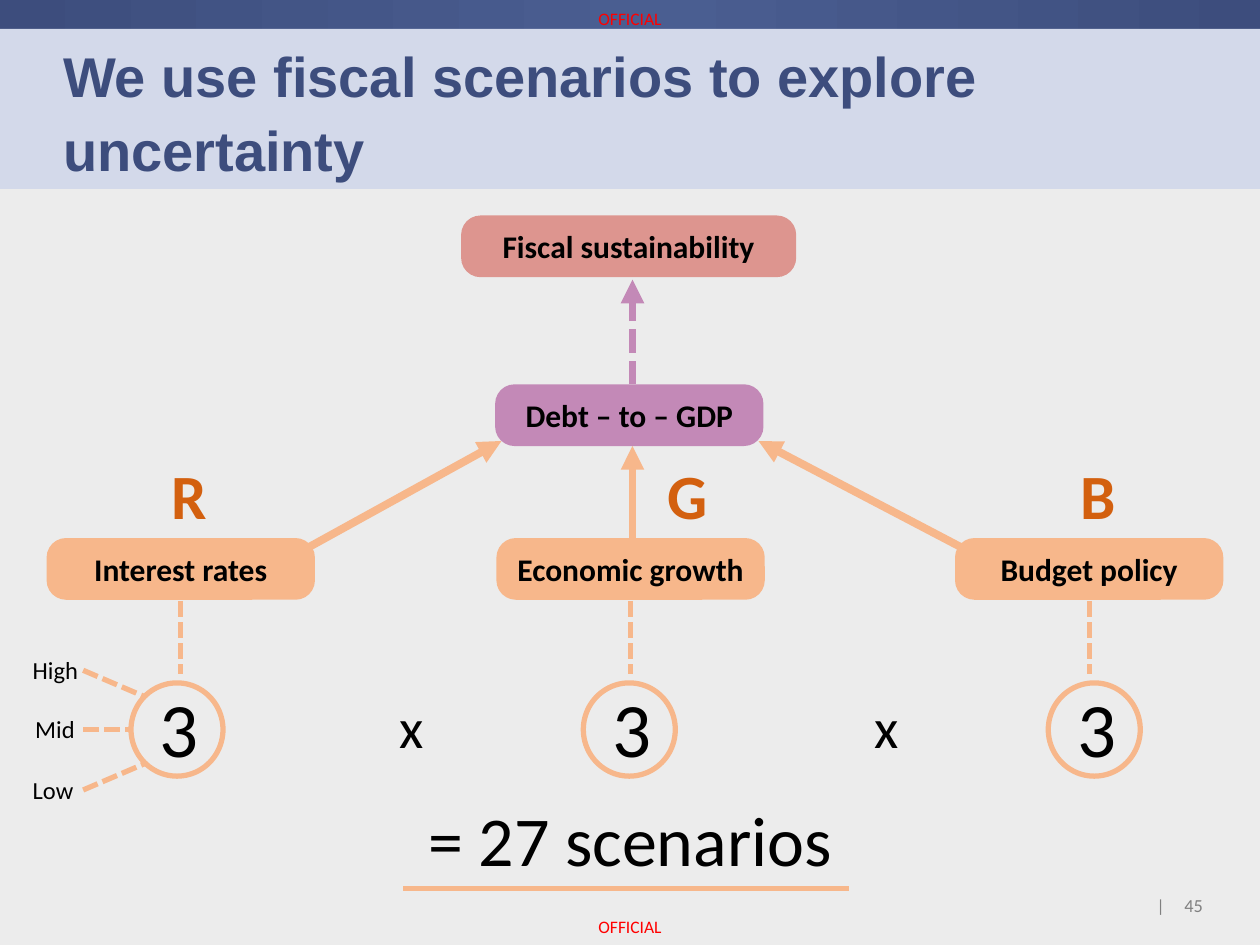
from copy import deepcopy

from pptx import Presentation
from pptx.dml.color import RGBColor
from pptx.enum.dml import MSO_LINE as Dash
from pptx.enum.shapes import MSO_CONNECTOR as Link, MSO_SHAPE as Preset
from pptx.enum.text import MSO_ANCHOR as Anchor, MSO_AUTO_SIZE as Fit, PP_ALIGN as Align
from pptx.oxml.ns import qn
from pptx.oxml.xmlchemy import OxmlElement
from pptx.util import Inches, Pt

PAPER = RGBColor(0xEC, 0xEC, 0xEC)
PALE_BLUE = RGBColor(0xD3, 0xD9, 0xEA)
NAVY = RGBColor(0x3D, 0x4D, 0x7D)
MID_BLUE = RGBColor(0x4A, 0x5E, 0x91)
GREY = RGBColor(0x80, 0x80, 0x80)
RED = RGBColor(0xFF, 0, 0)
BLACK = RGBColor(0, 0, 0)
MAUVE = RGBColor(0xC3, 0x89, 0xB7)
ROSE = RGBColor(0xDD, 0x95, 0x8F)
PEACH = RGBColor(0xF7, 0xB7, 0x8B)
ORANGE = RGBColor(0xD3, 0x60, 0x0F)

INSETS = ("margin_left", "margin_top", "margin_right", "margin_bottom")


def apply_format(target, values):
    """Set each named attribute of the target."""
    for name, value in values.items():
        setattr(target, name, value)


def write(shape, text, size, color=BLACK, bold=False, align=Align.LEFT,
          font="Calibri", **frame_format):
    """Put one formatted paragraph into a shape and return it."""
    frame = shape.text_frame
    apply_format(frame, frame_format)
    para = frame.paragraphs[0]
    para.alignment = align
    span = para.add_run()
    span.text = text
    apply_format(span.font, {"name": font, "size": Pt(size), "bold": bold})
    span.font.color.rgb = color
    return para


def add_label(page, box, text, size, inset=None, wrap=True, **style):
    """Add a text box at the given box."""
    label = page.shapes.add_textbox(*map(Inches, box))
    if inset is not None:
        style.update(dict.fromkeys(INSETS, Inches(inset)))
    write(label, text, size, word_wrap=wrap, **style)


def add_panel(page, box, fill=None, outline=None, preset=Preset.RECTANGLE):
    """Add a flat shape with an optional fill and outline."""
    panel = page.shapes.add_shape(preset, *map(Inches, box))
    panel.shadow.inherit = False
    if fill is None:
        panel.fill.background()
    else:
        panel.fill.solid()
        panel.fill.fore_color.rgb = fill
    if outline is None:
        panel.line.fill.background()
    else:
        panel.line.color.rgb = outline
        panel.line.width = Pt(3)
    return panel


def add_line(page, start, end, color=PEACH, width=3, dashed=False, arrow=False):
    """Add a straight line, dashed or with an arrowhead if asked."""
    link = page.shapes.add_connector(Link.STRAIGHT, *map(Inches, (*start, *end)))
    link.line.color.rgb = color
    link.line.width = Pt(width)
    if dashed:
        link.line.dash_style = Dash.SQUARE_DOT
    if arrow:
        head = OxmlElement("a:tailEnd")
        head.set("type", "triangle")
        link.line._get_or_add_ln().append(head)
    link.element.spPr.append(OxmlElement("a:effectLst"))


def add_node(page, box, text, fill):
    """Add a rounded box with a bold centred caption."""
    node = add_panel(page, box, fill, preset=Preset.ROUNDED_RECTANGLE)
    node.adjustments[0] = 0.315
    write(node, text, 18, bold=True, align=Align.CENTER,
          vertical_anchor=Anchor.MIDDLE, word_wrap=True)


def add_top_strip(page, box):
    """Add the gradient strip, dark at both ends."""
    strip = add_panel(page, box, NAVY)
    strip.fill.gradient()
    strip.fill.gradient_angle = 0
    stops = strip.element.spPr.find(qn("a:gradFill")).find(qn("a:gsLst"))
    stops.append(deepcopy(stops[-1]))
    for stop, position, color in zip(strip.fill.gradient_stops, (0, 0.52, 1),
                                     (NAVY, MID_BLUE, NAVY)):
        stop.position = position
        stop.color.rgb = color


def add_frame(page):
    """Add the background, markings and page number."""
    page.background.fill.solid()
    page.background.fill.fore_color.rgb = PAPER
    add_top_strip(page, (0, 0, 10, 0.23))
    for top in (0, 7.21):
        add_label(page, (4.6, top, 0.8, 0.29), "OFFICIAL", 10, inset=0, color=RED,
                  align=Align.CENTER, vertical_anchor=Anchor.MIDDLE)
    add_label(page, (9.18, 7.1, 0.05, 0.17), "|", 10, inset=0, color=GREY, align=Align.RIGHT)
    add_label(page, (9.4, 7.1, 0.17, 0.18), "45", 10.5, inset=0, wrap=False, color=GREY)


def add_heading(page, box, text):
    """Add the title band and set the title in front of it."""
    left, top, width, height = box
    add_panel(page, box, PALE_BLUE)
    title = page.shapes.title
    title.element.getparent().append(title.element)
    places = map(Inches, (left + 0.5, top, width - 1, height))
    apply_format(title, dict(zip(("left", "top", "width", "height"), places)))
    para = write(title, text, 32, NAVY, True, font="Arial", word_wrap=True,
                 auto_size=Fit.NONE, vertical_anchor=Anchor.TOP,
                 margin_left=0, margin_right=0,
                 margin_top=Inches(0.05), margin_bottom=Inches(0.05))
    apply_format(para, {"line_spacing": 1.1, "space_before": Pt(0), "space_after": Pt(6)})


def add_driver(page, box, caption, letter, letter_left, circle_left):
    """Add a driver box with its letter, dashed stem and circled count."""
    left, top, width, height = box
    center = left + width / 2
    add_node(page, box, caption, PEACH)
    add_label(page, (letter_left, top - 0.7, 0.5, 0.71), letter, 36, wrap=False,
              color=ORANGE, bold=True)
    add_line(page, (center, top + 0.5), (center, top + 1.08), dashed=True)
    add_panel(page, (circle_left, top + 1.15, 0.73, 0.74), outline=PEACH,
              preset=Preset.OVAL)
    add_label(page, (circle_left + 0.13, top + 1.08, 0.51, 0.84), "3", 44)


def add_levels(page, left, middle):
    """Add the High, Mid and Low labels with lines to the first circle."""
    levels = (("High", 0, -0.47, 1.15, -0.26), ("Mid", 0.02, 0, 1.04, 0),
              ("Low", 0, 0.48, 1.15, 0.27))
    for text, indent, rise, end, end_rise in levels:
        add_label(page, (left + indent, middle + rise - 0.12, 0.4, 0.24), text, 14, inset=0)
        add_line(page, (left + 0.4, middle + rise), (end, middle + end_rise), dashed=True)


def add_diagram(page):
    """Add the chain from the three drivers up to sustainability."""
    add_line(page, (2.42, 4.36), (3.98, 3.5), width=4.5, arrow=True)
    add_line(page, (7.66, 4.36), (6.02, 3.5), width=4.5, arrow=True)
    add_line(page, (5.02, 4.37), (5.02, 3.54), width=4.5, arrow=True)
    add_line(page, (5.02, 3.05), (5.02, 2.22), MAUVE, 4.5, dashed=True, arrow=True)
    add_node(page, (3.66, 1.71, 2.66, 0.49), "Fiscal sustainability", ROSE)
    add_node(page, (3.93, 3.05, 2.13, 0.49), "Debt – to – GDP", MAUVE)
    drivers = ((0.37, "Interest rates", "R", 1.26, 1.04),
               (3.94, "Economic growth", "G", 5.2, 4.63),
               (7.58, "Budget policy", "B", 8.48, 8.32))
    for left, *details in drivers:
        add_driver(page, (left, 4.27, 2.13, 0.49), *details)
    add_levels(page, 0.26, 5.79)


def add_product(page):
    """Add the multiplication signs and the underlined result."""
    for left in (3.07, 6.84):
        add_label(page, (left, 5.45, 0.4, 0.64), "x", 32, wrap=False)
    add_label(page, (3.3, 6.27, 3.44, 0.77), "= 27 scenarios", 40, wrap=False)
    add_line(page, (3.2, 7.05), (6.74, 7.05))


def main():
    """Build and save the deck."""
    deck = Presentation()
    deck.slide_width, deck.slide_height = Inches(10), Inches(7.5)
    page = deck.slides.add_slide(deck.slide_layouts[5])
    add_frame(page)
    add_heading(page, (0, 0.23, 10, 1.27), "We use fiscal scenarios to explore uncertainty")
    add_diagram(page)
    add_product(page)
    deck.save("out.pptx")


if __name__ == "__main__":
    main()
